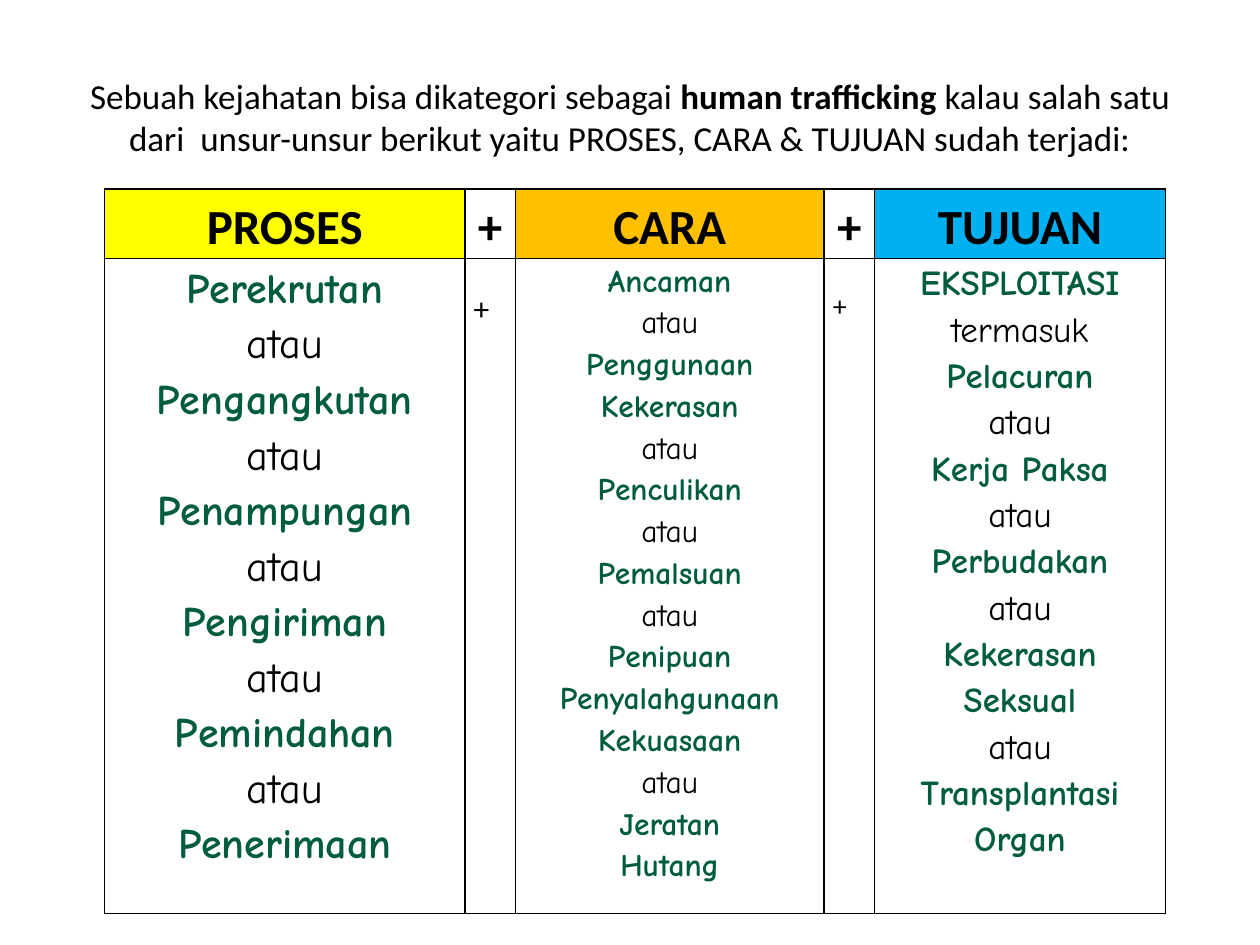
from lxml import etree
from pptx import Presentation
from pptx import util as u
from pptx.dml.color import RGBColor
from pptx.enum import text
from pptx.oxml import ns

COLORS = {"black": "000000", "green": "005D3B", "yellow": "FFFF00",
          "orange": "FFC000", "blue": "00B0F0"}
CONNECTIVES = {"atau", "termasuk"}
CENTER, LEFT = text.PP_ALIGN.CENTER, text.PP_ALIGN.LEFT


class SlideBuilder:
    """Holds the style and the current slide."""
    heading_font = "Calibri"
    word_font = "Comic Neue"
    line_spacing = 1.15
    border_width = u.Pt(1)

    def __init__(self, slide):
        self.slide = slide

    def run(self, paragraph, words, size, font, color="black", bold=False):
        run = paragraph.add_run()
        run.text = words
        values = {"size": u.Pt(size), "name": font, "bold": bold}
        for name, value in values.items():
            setattr(run.font, name, value)
        run.font.color.rgb = RGBColor.from_string(COLORS[color])

    def title(self, box, parts, size):
        title = self.slide.shapes.title
        for name, value in zip(("left", "top", "width", "height"), box):
            setattr(title, name, u.Inches(value))
        title.text_frame.vertical_anchor = text.MSO_ANCHOR.MIDDLE
        paragraph = title.text_frame.paragraphs[0]
        paragraph.alignment = CENTER
        for words, bold in parts:
            self.run(paragraph, words, size, self.heading_font, bold=bold)

    def table(self, left, top, widths, heights):
        box = [u.Inches(v) for v in (left, top, sum(widths), sum(heights))]
        table = self.slide.shapes.add_table(
            len(heights), len(widths), *box).table
        table.first_row = table.horz_banding = False
        for column, width in zip(table.columns, widths):
            column.width = u.Inches(width)
        for row, height in zip(table.rows, heights):
            row.height = u.Inches(height)
        return table

    def cell(self, cell, lines, size, font, fill=None, bold=False,
             align=CENTER, top=0):
        margins = {"margin_left": 0.07, "margin_right": 0.07,
                   "margin_top": top, "margin_bottom": 0}
        for name, value in margins.items():
            setattr(cell, name, u.Inches(value))
        if fill:
            cell.fill.solid()
            cell.fill.fore_color.rgb = RGBColor.from_string(COLORS[fill])
        else:
            cell.fill.background()
        self.borders(cell)

        frame = cell.text_frame
        for index, line in enumerate(lines):
            paragraph = frame.add_paragraph() if index else frame.paragraphs[0]
            paragraph.alignment = align
            paragraph.line_spacing = self.line_spacing
            key_word = font == self.word_font and line not in CONNECTIVES
            self.run(paragraph, line, size, font,
                     "green" if key_word else "black", bold or key_word)

    def borders(self, cell):
        properties = cell._tc.get_or_add_tcPr()
        for index, side in enumerate(("lnL", "lnR", "lnT", "lnB")):
            line = etree.Element(ns.qn(f"a:{side}"), w=str(self.border_width))
            fill = etree.SubElement(line, ns.qn("a:solidFill"))
            etree.SubElement(fill, ns.qn("a:srgbClr"), val=COLORS["black"])
            properties.insert(index, line)


def main():
    deck = Presentation()
    deck.slide_width, deck.slide_height = u.Inches(10), u.Inches(7.5)
    builder = SlideBuilder(deck.slides.add_slide(deck.slide_layouts[5]))

    # Title
    builder.title((0.5, 0.3, 9, 1.25), [
        ("Sebuah kejahatan bisa dikategori sebagai ", False),
        ("human trafficking ", True),
        ("kalau salah satu dari  unsur-unsur berikut yaitu "
         "PROSES, CARA & TUJUAN sudah terjadi:", False),
    ], 20)

    # Table contents: heading, fill, word size, words
    process = ["Perekrutan", "atau", "Pengangkutan", "atau", "Penampungan",
               "atau", "Pengiriman", "atau", "Pemindahan", "atau",
               "Penerimaan"]
    means = ["Ancaman", "atau", "Penggunaan", "Kekerasan", "atau",
             "Penculikan", "atau", "Pemalsuan", "atau", "Penipuan",
             "Penyalahgunaan", "Kekuasaan", "atau", "Jeratan", "Hutang"]
    purpose = ["EKSPLOITASI", "termasuk", "Pelacuran", "atau", "Kerja Paksa",
               "atau", "Perbudakan", "atau", "Kekerasan", "Seksual", "atau",
               "Transplantasi", "Organ"]
    columns = [("PROSES", "yellow", 24, process), ("+", None, 18, ["+"]),
               ("CARA", "orange", 18, means), ("+", None, 16, ["+"]),
               ("TUJUAN", "blue", 20, purpose)]

    # Table of elements
    elements = builder.table(0.83, 1.5, [2.86, 0.4, 2.45, 0.4, 2.31],
                             [0.55, 5.2])
    for index, (heading, fill, size, words) in enumerate(columns):
        builder.cell(elements.cell(0, index), [heading], 28,
                     builder.heading_font, fill, bold=True)
        if heading == "+":
            builder.cell(elements.cell(1, index), words, size,
                         builder.heading_font, align=LEFT, top=0.21)
        else:
            builder.cell(elements.cell(1, index), words, size,
                         builder.word_font)

    deck.save("out.pptx")


if __name__ == "__main__":
    main()
